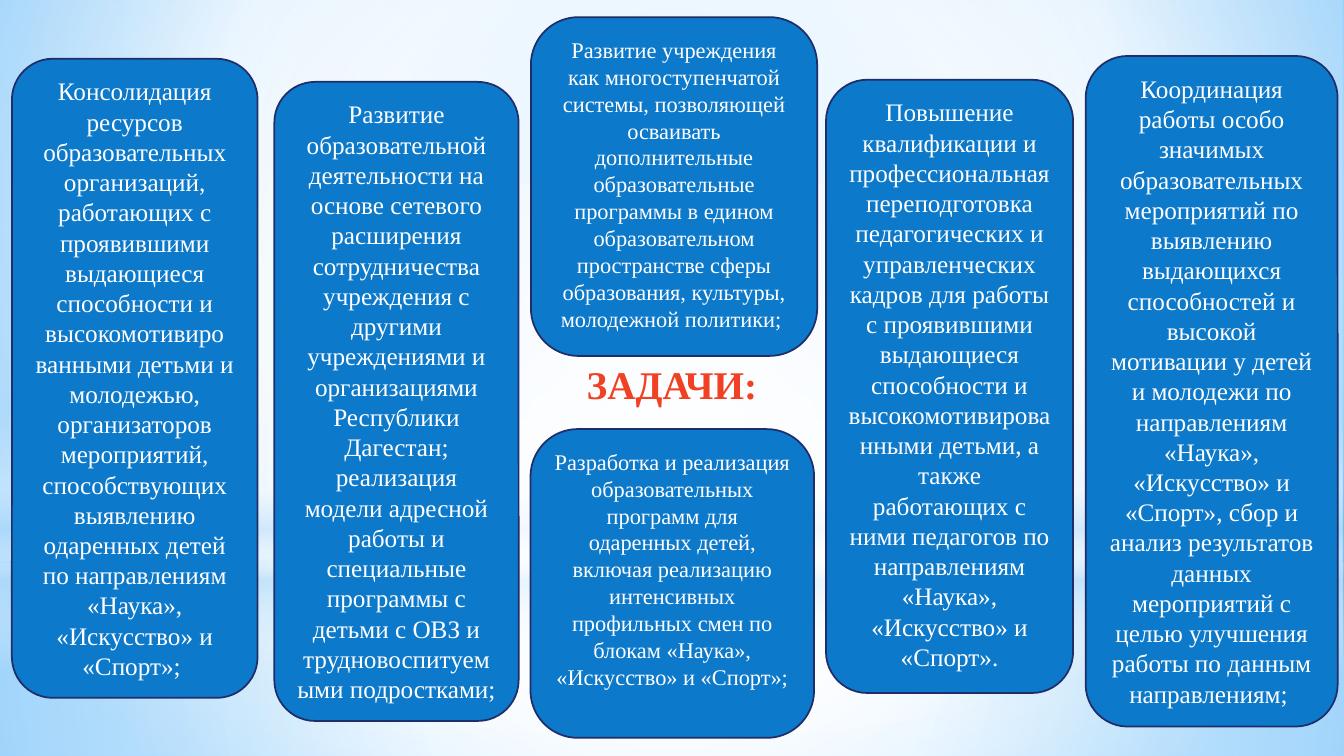
from lxml.etree import SubElement
from pptx import Presentation
from pptx.dml.color import RGBColor
from pptx.enum.shapes import MSO_SHAPE
from pptx.enum.text import MSO_ANCHOR, PP_ALIGN
from pptx.oxml.ns import qn
from pptx.util import Pt

FONT = "Times New Roman"
WHITE = RGBColor(0xFF, 0xFF, 0xFF)
PALE = RGBColor(0xB4, 0xDC, 0xFA)
SKY = RGBColor(0x9E, 0xD5, 0xFF)
AZURE = RGBColor(0x5B, 0xB9, 0xFF)
BLUE = RGBColor(0x0D, 0x79, 0xCA)
NAVY = RGBColor(0x1F, 0x2E, 0x69)
RED = RGBColor(0xF1, 0x41, 0x24)
CENTRE = (50, 50, 50, 50)

GLOWS = [
    (MSO_SHAPE.RECTANGLE, (0, 402, 960, 138),
     [(0, WHITE, 91), (37, WHITE, 76), (100, PALE, 79)], CENTRE),
    (MSO_SHAPE.RECTANGLE, (0, 0, 960, 402),
     [(0, WHITE, 89), (48, WHITE, 62), (100, PALE, 79)], CENTRE),
    (MSO_SHAPE.RECTANGLE, (0, 297, 960, 180),
     [(0, WHITE, 0), (29, WHITE, 30), (45, PALE, 40),
      (55, WHITE, 26), (65, PALE, 60), (100, WHITE, 0)], None),
    (MSO_SHAPE.OVAL, (0, 126, 960, 402),
     [(0, WHITE, 100), (56, WHITE, 0)], CENTRE),
]

TASKS = [
    ((8.5, 42, 175.5, 456.5), 18, [
        "Консолидация ресурсов образовательных организаций, работающих с "
        "проявившими выдающиеся способности и высокомотивиро ванными детьми "
        "и молодежью, организаторов мероприятий, способствующих выявлению "
        "одаренных детей по направлениям «Наука», «Искусство» и «Спорт»; "]),
    ((196, 58.5, 174.5, 456.5), 18, [
        "Развитие образовательной деятельности на основе сетевого расширения "
        "сотрудничества учреждения с другими учреждениями и организациями "
        "Республики Дагестан;",
        "реализация модели адресной работы и специальные программы с детьми "
        "с ОВЗ и трудновоспитуемыми подростками;"]),
    ((379, 306.5, 202.5, 220.5), 16, [
        "Разработка и реализация образовательных программ для одаренных "
        "детей, включая реализацию интенсивных профильных смен по блокам "
        "«Наука», «Искусство» и «Спорт»;"]),
    ((775.5, 40, 180, 479), 18, [
        "Координация работы особо значимых образовательных мероприятий по "
        "выявлению выдающихся способностей и высокой мотивации у детей и "
        "молодежи по направлениям «Наука», «Искусство» и «Спорт», сбор и "
        "анализ результатов данных мероприятий с целью улучшения работы по "
        "данным направлениям; "]),
    ((379.25, 12.25, 204.5, 242), 16, [
        "Развитие учреждения как многоступенчатой системы, позволяющей "
        "осваивать дополнительные образовательные программы в едином "
        "образовательном пространстве сферы образования, культуры, "
        "молодежной политики; "]),
    ((590, 57, 176.5, 438), 18, [
        "Повышение квалификации и профессиональная переподготовка "
        "педагогических и управленческих кадров для работы с проявившими "
        "выдающиеся способности и высокомотивированными детьми, а также "
        "работающих с ними педагогов по направлениям «Наука», «Искусство» "
        "и «Спорт»."]),
]


def points(frame):
    """Turn a frame of plain numbers into lengths."""
    return [Pt(value) for value in frame]


def paint_gradient(fill, element, stops, focus):
    """Fill with a circular gradient around focus, or a vertical one."""
    fill.solid()
    solid = element.find(".//" + qn("a:solidFill"))
    gradient = solid.makeelement(qn("a:gradFill"), {"rotWithShape": "1"})
    solid.getparent().replace(solid, gradient)
    stop_list = SubElement(gradient, qn("a:gsLst"))
    for position, color, opacity in stops:
        stop = SubElement(stop_list, qn("a:gs"), pos=str(position * 1000))
        tone = SubElement(stop, qn("a:srgbClr"), val=str(color))
        if opacity < 100:
            SubElement(tone, qn("a:alpha"), val=str(opacity * 1000))
    if focus is None:
        SubElement(gradient, qn("a:lin"), ang="5400000", scaled="0")
        return
    circle = SubElement(gradient, qn("a:path"), path="circle")
    sides = {side: str(share * 1000) for side, share in zip("ltrb", focus)}
    SubElement(circle, qn("a:fillToRect"), sides)


def add_glow(page, kind, frame, stops, focus):
    """Add a translucent background shape."""
    glow = page.shapes.add_shape(kind, *points(frame))
    glow.shadow.inherit = False
    paint_gradient(glow.fill, glow.element, stops, focus)
    glow.line.fill.background()


def write(box, texts, size, color, bold=False):
    """Write centred paragraphs from the top of a box."""
    frame = box.text_frame
    frame.word_wrap = True
    frame.vertical_anchor = MSO_ANCHOR.TOP
    for index, text in enumerate(texts):
        para = frame.add_paragraph() if index else frame.paragraphs[0]
        para.alignment = PP_ALIGN.CENTER
        span = para.add_run()
        span.text = text
        span.font.name = FONT
        span.font.size = Pt(size)
        span.font.bold = bold
        span.font.color.rgb = color


def add_task(page, frame, size, texts):
    """Add a rounded blue task card."""
    card = page.shapes.add_shape(MSO_SHAPE.ROUNDED_RECTANGLE, *points(frame))
    card.shadow.inherit = False
    card.fill.solid()
    card.fill.fore_color.rgb = BLUE
    card.line.color.rgb = NAVY
    card.line.width = Pt(1.25)
    write(card, texts, size, WHITE)


def main():
    """Build the slide of tasks."""
    deck = Presentation()
    deck.slide_width, deck.slide_height = Pt(960), Pt(540)
    page = deck.slides.add_slide(deck.slide_layouts[6])
    paint_gradient(page.background.fill, page.element,
                   [(0, SKY, 100), (60, WHITE, 100), (100, AZURE, 100)],
                   (20, 10, 20, 60))
    for glow in GLOWS:
        add_glow(page, *glow)
    title = page.shapes.add_textbox(*points((402.5, 254, 155, 75)))
    write(title, ["ЗАДАЧИ:"], 28, RED, bold=True)
    for task in TASKS:
        add_task(page, *task)
    deck.save("out.pptx")


if __name__ == "__main__":
    main()
